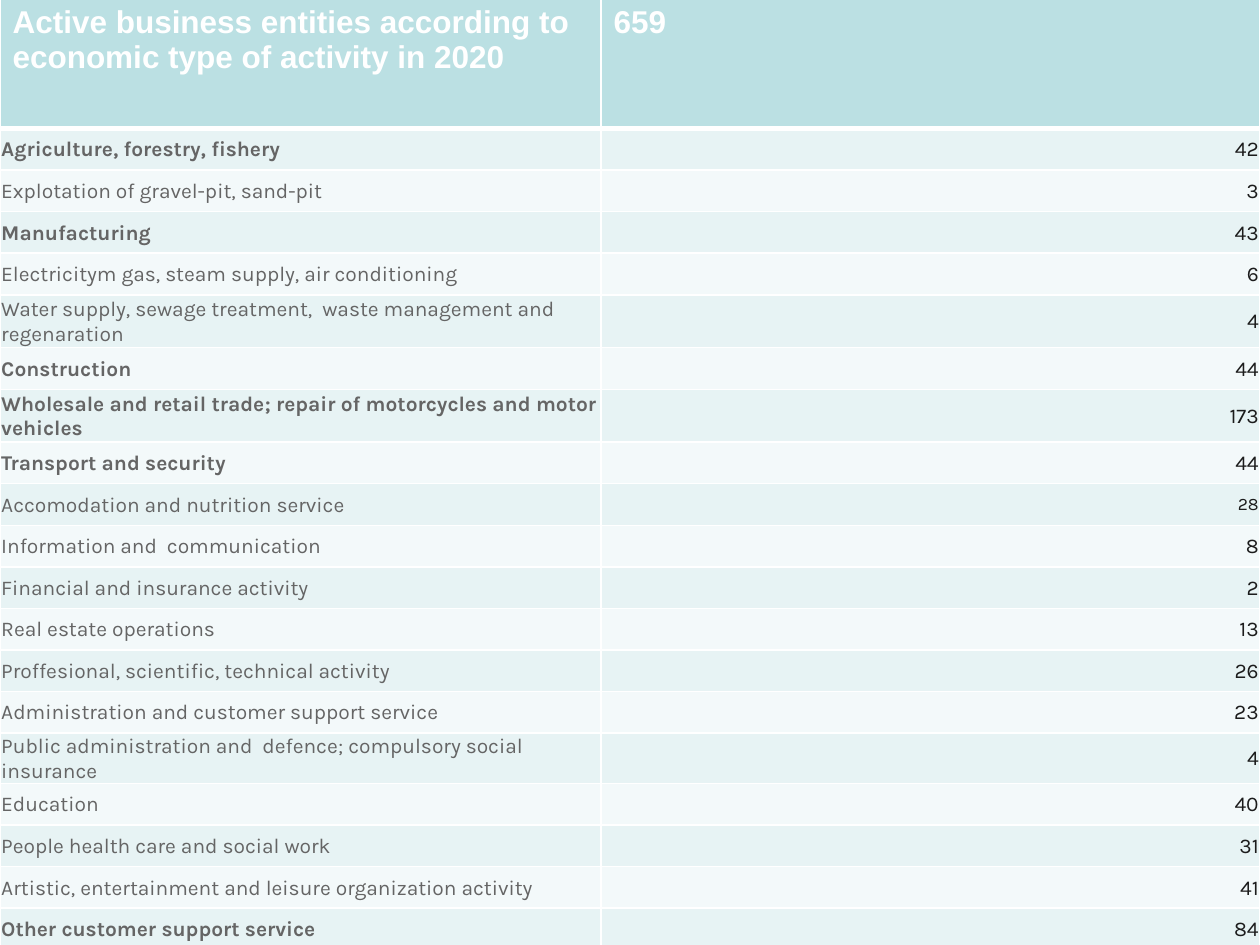
from lxml import etree
from pptx import Presentation
from pptx import util as u
from pptx.dml.color import RGBColor
from pptx.enum import text
from pptx.oxml.ns import qn

TITLE = "Active business entities according to economic type of activity in 2020"
TOTAL = 659
ACTIVITIES = [
    ("Agriculture, forestry, fishery", 42),
    ("Explotation of gravel-pit, sand-pit", 3),
    ("Manufacturing", 43),
    ("Electricitym gas, steam supply, air conditioning", 6),
    ("Water supply, sewage treatment,  waste management and regenaration", 4),
    ("Construction", 44),
    ("Wholesale and retail trade; repair of motorcycles and motor vehicles", 173),
    ("Transport and security", 44),
    ("Accomodation and nutrition service", 28),
    ("Information and  communication", 8),
    ("Financial and insurance activity", 2),
    ("Real estate operations", 13),
    ("Proffesional, scientific, technical activity", 26),
    ("Administration and customer support service", 23),
    ("Public administration and  defence; compulsory social insurance", 4),
    ("Education", 40),
    ("People health care and social work", 31),
    ("Artistic, entertainment and leisure organization activity", 41),
    ("Other customer support service", 84),
]
LEADING_COUNT = 42
SMALL_COUNT = 28
TALL_ROWS = (5, 7)


def color(value):
    return RGBColor.from_string(value)


class ActivitySlide:
    header_fill = "BBE0E3"
    row_fills = ("F3F9FA", "E7F3F4")
    white, label_color, count_color = "FFFFFF", "656565", "1C1C1C"
    header_font, body_font = "Arial", "Karla"

    def __init__(self, deck):
        self.slide = deck.slides.add_slide(deck.slide_layouts[6])

    def background(self, start, end):
        fill = self.slide.background.fill
        fill.gradient()
        fill.gradient_angle = 270
        for stop, value in zip(fill.gradient_stops, (start, end)):
            stop.color.rgb = color(value)

    def table(self, widths, heights):
        frame = self.slide.shapes.add_table(
            len(heights), len(widths), u.Inches(0), u.Inches(-0.01),
            u.Inches(sum(widths)), u.Inches(sum(heights)))
        for column, width in zip(frame.table.columns, widths):
            column.width = u.Inches(width)
        for row, height in zip(frame.table.rows, heights):
            row.height = u.Inches(height)
        return frame.table

    def borders(self, cell, top=1, bottom=1):
        properties = cell._tc.get_or_add_tcPr()
        for side, points in (("L", 1), ("R", 1), ("T", top), ("B", bottom)):
            line = etree.SubElement(properties, qn(f"a:ln{side}"), w=str(u.Pt(points)))
            fill = etree.SubElement(line, qn("a:solidFill"))
            etree.SubElement(fill, qn("a:srgbClr"), val=self.white)

    def fill_cell(self, cell, words, fill, font_name, size, font_color, bold):
        cell.fill.solid()
        cell.fill.fore_color.rgb = color(fill)
        cell.text = str(words)
        para = cell.text_frame.paragraphs[0]
        para.font.name = font_name
        para.font.size = u.Pt(size)
        para.font.bold = bold
        para.font.color.rgb = color(font_color)
        return para

    def header(self, cell, words):
        self.borders(cell, bottom=3)
        self.fill_cell(cell, words, self.header_fill, self.header_font, 18,
                       self.white, True)

    def body(self, cell, words, row, font_color, size=12, bold=False):
        self.borders(cell, top=3 if row == 1 else 1)
        cell.margin_left = cell.margin_right = cell.margin_top = u.Inches(0.01)
        cell.margin_bottom = 0
        cell.vertical_anchor = text.MSO_ANCHOR.MIDDLE
        return self.fill_cell(cell, words, self.row_fills[row % 2], self.body_font,
                              size, font_color, bold)

    def activity(self, table, row, name, count):
        self.body(table.cell(row, 0), name, row, self.label_color,
                  bold=count >= LEADING_COUNT)
        para = self.body(table.cell(row, 1), count, row, self.count_color,
                         size=10 if count == SMALL_COUNT else 12)
        para.alignment = text.PP_ALIGN.RIGHT


def main():
    deck = Presentation()
    deck.slide_width, deck.slide_height = u.Inches(10), u.Inches(7.5)
    page = ActivitySlide(deck)
    page.background("6D9200", "99CC00")
    heights = [1.03] + [0.42 if row in TALL_ROWS else 0.33
                        for row in range(1, len(ACTIVITIES) + 1)]
    table = page.table((4.77, 5.23), heights)
    page.header(table.cell(0, 0), TITLE)
    page.header(table.cell(0, 1), TOTAL)
    for row, (name, count) in enumerate(ACTIVITIES, 1):
        page.activity(table, row, name, count)
    deck.save("out.pptx")


if __name__ == "__main__":
    main()
